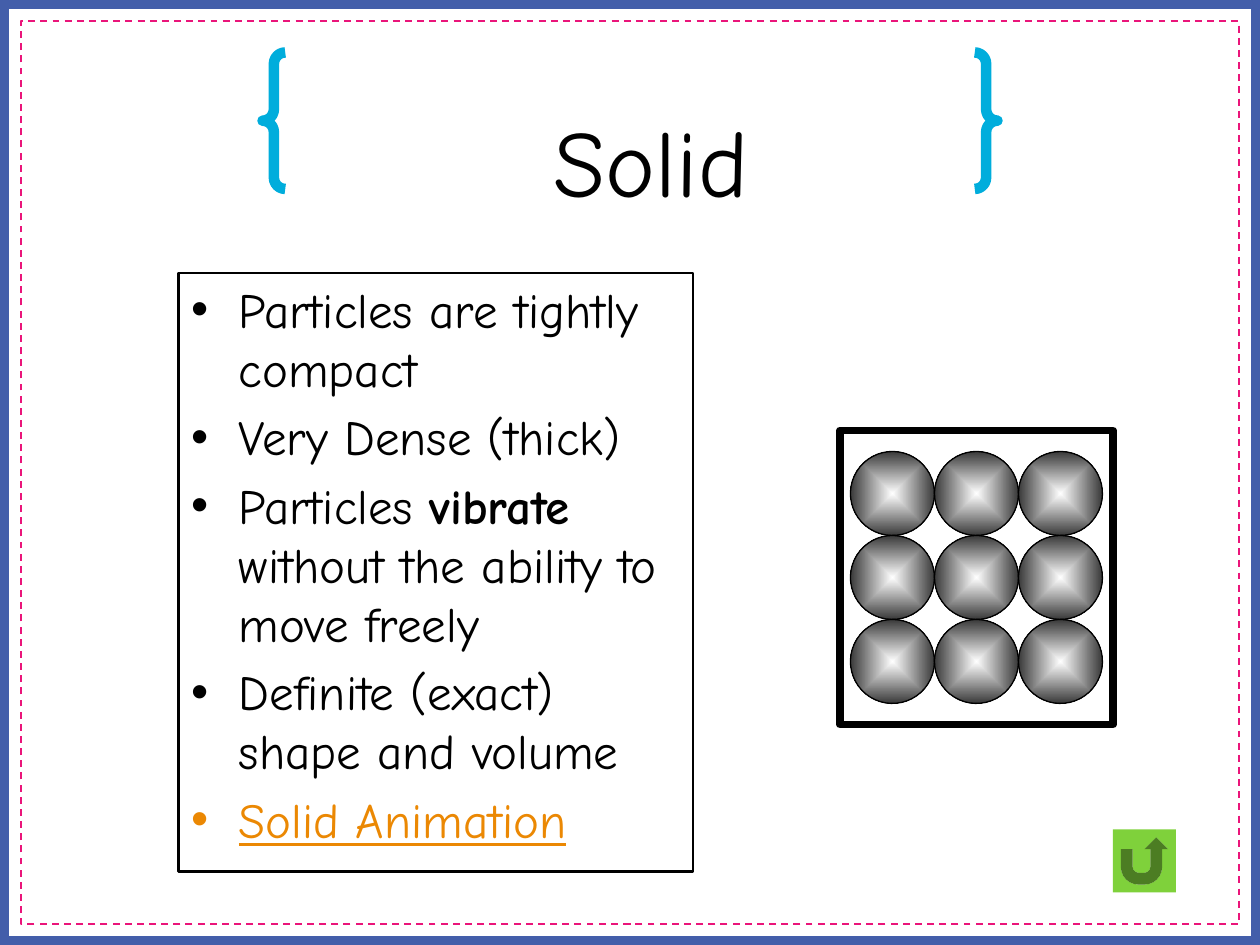
from dataclasses import dataclass
from itertools import product

from lxml.etree import SubElement
from pptx import Presentation
from pptx.dml.color import RGBColor as Color
from pptx.enum.dml import MSO_LINE_DASH_STYLE as Dash
from pptx.enum.shapes import MSO_SHAPE as Preset
from pptx.enum.text import MSO_ANCHOR as Anchor, MSO_AUTO_SIZE as AutoSize, PP_ALIGN as Align
from pptx.oxml.ns import qn
from pptx.util import Inches, Pt


@dataclass(frozen=True)
class Theme:
    font: str = "Comic Neue"
    title_size: float = 54
    body_size: float = 28
    ink: str = "000000"
    paper: str = "FFFFFF"
    border: str = "435EAA"
    stitch: str = "EA157A"
    brace: str = "00ADDC"
    link: str = "EB8803"
    button: str = "7FD13B"


class SlideBuilder:
    """Places elements on a grid of 120 columns by 90 rows."""

    COLUMNS, ROWS = 120, 90

    def __init__(self, presentation, theme):
        self.theme = theme
        self.column = presentation.slide_width / self.COLUMNS
        self.row = presentation.slide_height / self.ROWS
        self.slide = presentation.slides.add_slide(presentation.slide_layouts[1])

    def box(self, left, top, width, height):
        return (round(left * self.column), round(top * self.row),
                round(width * self.column), round(height * self.row))

    def place(self, placeholder, area):
        (placeholder.left, placeholder.top,
         placeholder.width, placeholder.height) = self.box(*area)
        self.slide.shapes._spTree.append(placeholder._element)  # bring to front
        placeholder.text_frame.auto_size = AutoSize.NONE
        placeholder.text_frame.word_wrap = True

    def format_run(self, run, size, color=None, bold=False, underline=False):
        font = run.font
        font.name, font.size = self.theme.font, Pt(size)
        font.bold, font.underline = bold, underline
        font.color.rgb = Color.from_string(color or self.theme.ink)

    def outline(self, shape, color, width):
        shape.line.color.rgb = Color.from_string(color)
        shape.line.width = Pt(width)

    def solid(self, shape, color):
        shape.fill.solid()
        shape.fill.fore_color.rgb = Color.from_string(color)

    def shape(self, preset, area, fill=None, line=None, width=1, dash=None):
        shape = self.slide.shapes.add_shape(preset, *self.box(*area))
        shape.shadow.inherit = False
        if fill:
            self.solid(shape, fill)
        else:
            shape.fill.background()
        if line:
            self.outline(shape, line, width)
            shape.line.dash_style = dash
        else:
            shape.line.fill.background()
        return shape

    def title(self, text, area):
        title = self.slide.shapes.title
        self.place(title, area)
        title.text_frame.text = text
        title.text_frame.vertical_anchor = Anchor.MIDDLE
        paragraph = title.text_frame.paragraphs[0]
        paragraph.alignment = Align.CENTER
        self.format_run(paragraph.runs[0], self.theme.title_size)

    def bullets(self, items, area):
        """Each item is a list of (text, run format) pairs."""
        body = self.slide.placeholders[1]
        self.place(body, area)
        self.solid(body, self.theme.paper)
        self.outline(body, self.theme.ink, 1.5)
        frame = body.text_frame
        frame.vertical_anchor = Anchor.TOP
        for index, item in enumerate(items):
            paragraph = frame.add_paragraph() if index else frame.paragraphs[0]
            properties = paragraph._p.get_or_add_pPr()
            properties.set("marL", str(Inches(0.38)))
            properties.set("indent", str(-Inches(0.38)))
            SubElement(properties, qn("a:buChar")).set("char", "•")
            paragraph.space_before = Pt(0.2 * self.theme.body_size if index else 0)
            for text, style in item:
                run = paragraph.add_run()
                run.text = text
                self.format_run(run, self.theme.body_size, **style)

    def particle(self, area):
        ball = self.shape(Preset.OVAL, area, line=self.theme.ink, width=0.75)
        ball.rotation = 339.4
        ball.fill.gradient()
        colors = (self.theme.paper, self.theme.ink)
        for position, (stop, color) in enumerate(zip(ball.fill.gradient_stops, colors)):
            stop.position = position
            stop.color.rgb = Color.from_string(color)
        # Turn the linear gradient into one that spreads from the centre
        gradient = ball._element.spPr.find(qn("a:gradFill"))
        gradient.set("rotWithShape", "0")
        gradient.remove(gradient.find(qn("a:lin")))
        spread = SubElement(gradient, qn("a:path"))
        spread.set("path", "shape")
        centre = SubElement(spread, qn("a:fillToRect"))
        for side in "ltrb":
            centre.set(side, "50000")


def main():
    theme = Theme()
    presentation = Presentation()
    presentation.slide_width, presentation.slide_height = Inches(10), Inches(7.5)
    builder = SlideBuilder(presentation, theme)

    # Page border, stitching and title braces
    builder.shape(Preset.RECTANGLE, (0, 0, 120, 90), line=theme.border, width=10)
    builder.shape(Preset.RECTANGLE, (2, 2, 116, 86), line=theme.stitch, dash=Dash.DASH)
    builder.shape(Preset.DOUBLE_BRACE, (25, 5, 70, 13), line=theme.brace, width=6)
    builder.title("Solid", (12, 7.7, 100, 15))

    # Container with a tight lattice of particles
    builder.shape(Preset.RECTANGLE, (80, 41, 26, 28), line=theme.ink, width=4.5)
    diameter = 8
    for row, column in product(range(3), repeat=2):
        builder.particle((81 + column * diameter, 43 + row * diameter, diameter, diameter))

    # Properties of a solid
    builder.bullets([
        [("Particles are tightly compact", {})],
        [("Very Dense (thick)", {})],
        [("Particles ", {}), ("vibrate", {"bold": True}),
         (" without the ability to move freely", {})],
        [("Definite (exact) shape and volume", {})],
        [("Solid Animation", {"color": theme.link, "underline": True})],
    ], (17, 26, 49, 57))

    # Return button
    builder.shape(Preset.ACTION_BUTTON_RETURN, (106, 79, 6, 6), fill=theme.button)

    presentation.save("out.pptx")


if __name__ == "__main__":
    main()
